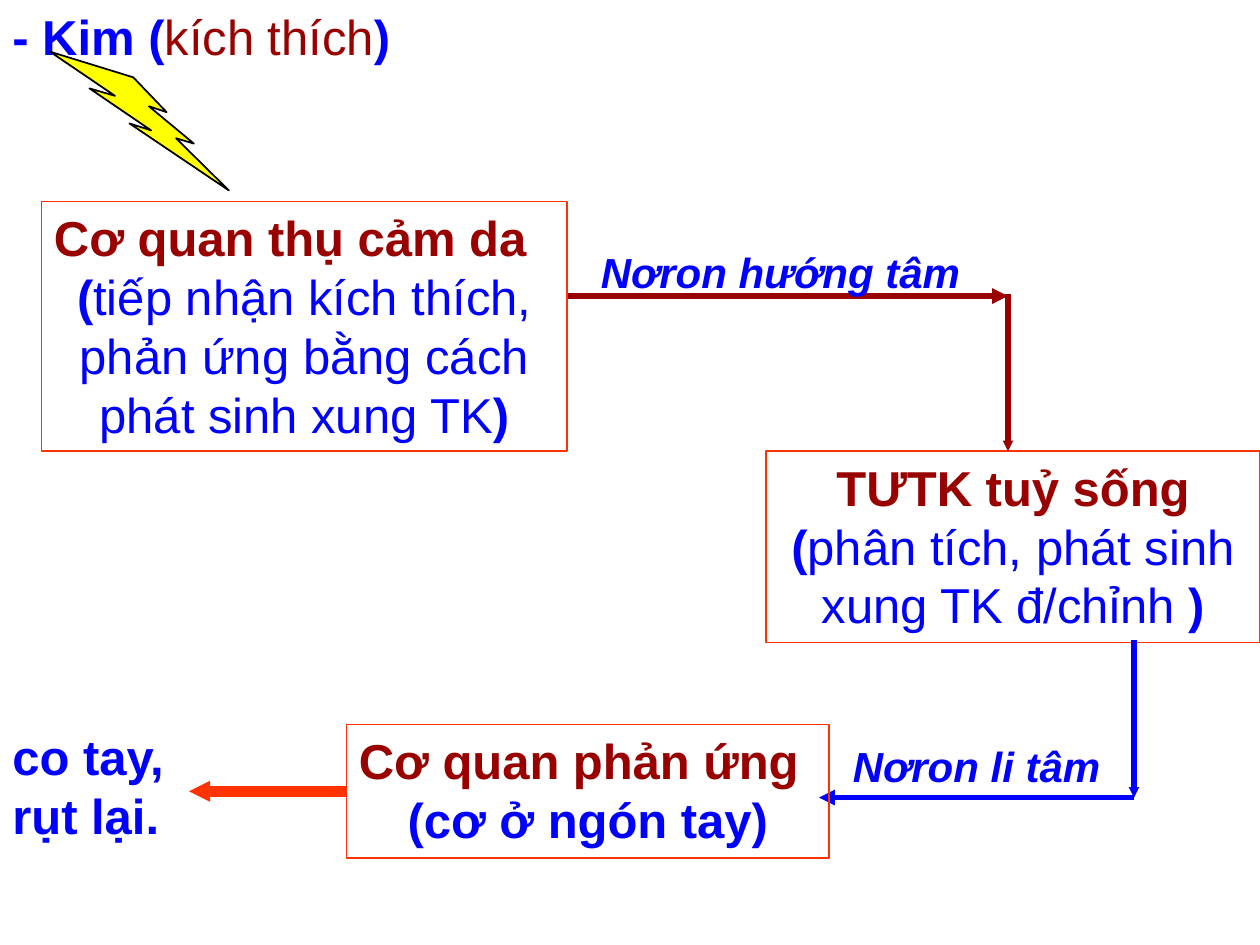
"""Build the reflex arc slide: stimulus, receptor, spinal cord, effector and response."""
from dataclasses import dataclass

from lxml.etree import SubElement
from pptx import Presentation
from pptx.dml.color import RGBColor
from pptx.enum.shapes import MSO_CONNECTOR, MSO_SHAPE
from pptx.enum.text import MSO_ANCHOR, MSO_AUTO_SIZE, PP_ALIGN
from pptx.oxml.ns import qn
from pptx.util import Inches, Pt

COLORS = {"blue": "0000FF", "maroon": "990000", "orange": "FF3300", "yellow": "FFFF00", "black": "000000"}
LEFT, CENTER = PP_ALIGN.LEFT, PP_ALIGN.CENTER


@dataclass
class Run:
    text: str
    color: str = "blue"
    bold: bool = True
    italic: bool = False
    size: int = 28


@dataclass
class Para:
    runs: list[Run]
    align: PP_ALIGN = LEFT


@dataclass
class Block:
    at: tuple[float, float, float, float]
    paras: list[Para]
    boxed: bool = False
    wrap: bool = True


@dataclass
class Arrow:
    start: tuple[float, float]
    end: tuple[float, float]
    color: str
    width: int = 3
    head: str = "sm"


def rgb(name: str) -> RGBColor:
    return RGBColor.from_string(COLORS[name])


def label(at: tuple[float, float, float, float], text: str) -> Block:
    return Block(at, [Para([Run(text, italic=True, size=24)])], wrap=False)


def detail(text: str) -> Para:
    return Para([Run("("), Run(text, bold=False), Run(")")], CENTER)


def add_block(s, block: Block):
    box = [Inches(v) for v in block.at]
    if block.boxed:
        sp = s.shapes.add_shape(MSO_SHAPE.RECTANGLE, *box)
        sp.shadow.inherit = False
        sp.fill.background()
        sp.line.color.rgb = rgb("orange")
        sp.line.width = Pt(1)
    else:
        sp = s.shapes.add_textbox(*box)
    tf = sp.text_frame
    tf.word_wrap = block.wrap
    tf.auto_size = MSO_AUTO_SIZE.SHAPE_TO_FIT_TEXT
    tf.vertical_anchor = MSO_ANCHOR.TOP
    for i, para in enumerate(block.paras):
        p = tf.add_paragraph() if i else tf.paragraphs[0]
        p.alignment = para.align
        for run in para.runs:
            r = p.add_run()
            r.text = run.text
            r.font.name = "Arial"
            r.font.size = Pt(run.size)
            r.font.bold = run.bold
            r.font.italic = run.italic
            r.font.color.rgb = rgb(run.color)
    return sp


def add_arrow(s, arrow: Arrow):
    ends = [Inches(v) for v in (*arrow.start, *arrow.end)]
    cxn = s.shapes.add_connector(MSO_CONNECTOR.STRAIGHT, *ends)
    cxn.line.color.rgb = rgb(arrow.color)
    cxn.line.width = Pt(arrow.width)
    props = cxn._element.spPr
    SubElement(props.find(qn("a:ln")), qn("a:tailEnd"), type="triangle", w=arrow.head, len=arrow.head)
    SubElement(props, qn("a:effectLst"))
    return cxn


def add_bolt(s) -> None:
    sp = s.shapes.add_shape(MSO_SHAPE.LIGHTNING_BOLT, Inches(0.25), Inches(0.67), Inches(1.75), Inches(0.5))
    sp.rotation = 24.6
    sp.shadow.inherit = False
    sp.fill.solid()
    sp.fill.fore_color.rgb = rgb("yellow")
    sp.line.color.rgb = rgb("black")
    sp.line.width = Pt(1)


STIMULUS = Block((0, 0, 3.21, 0.57),
                 [Para([Run("- Kim ("), Run("kích thích", "maroon", False), Run(")")])], wrap=False)
RECEPTOR = Block((0.33, 1.6, 4.17, 1.98),
                 [Para([Run("Cơ quan thụ cảm da", "maroon")]),
                  detail("tiếp nhận kích thích, phản ứng bằng cách phát sinh xung TK")], boxed=True)
SPINAL_CORD = Block((6.08, 3.58, 3.92, 1.52),
                    [Para([Run("TƯTK tuỷ sống", "maroon")], CENTER),
                     detail("phân tích, phát sinh xung TK đ/chỉnh ")], boxed=True)
EFFECTOR = Block((2.75, 5.75, 3.83, 1.06),
                 [Para([Run("Cơ quan phản ứng", "maroon")]),
                  Para([Run("(cơ ở ngón tay)")], CENTER)], boxed=True)
RESPONSE = Block((0, 5.72, 1.58, 1.03), [Para([Run("co tay, rụt lại.")])])
AFFERENT = label((4.67, 1.91, 3.1, 0.5), "Nơron hướng tâm")
EFFERENT = label((6.67, 5.83, 2.25, 0.5), "Nơron li tâm")


def main() -> None:
    prs = Presentation()
    prs.slide_width, prs.slide_height = Inches(10), Inches(7.5)
    s = prs.slides.add_slide(prs.slide_layouts[6])
    add_arrow(s, Arrow((4.5, 2.35), (8, 2.35), "maroon", head="med"))
    add_arrow(s, Arrow((9, 6.33), (6.5, 6.33), "blue", head="med"))
    for block in (STIMULUS, RECEPTOR, AFFERENT, SPINAL_CORD, EFFERENT):
        add_block(s, block)
    effector = add_block(s, EFFECTOR)
    add_block(s, RESPONSE)
    add_bolt(s)
    add_arrow(s, Arrow((8, 2.33), (8, 3.58), "maroon"))
    add_arrow(s, Arrow((9, 5.08), (9, 6.33), "blue"))
    reaction = add_arrow(s, Arrow((2.75, 6.28), (1.5, 6.28), "orange", 6))
    reaction.begin_connect(effector, 1)
    prs.save("out.pptx")


if __name__ == "__main__":
    main()
